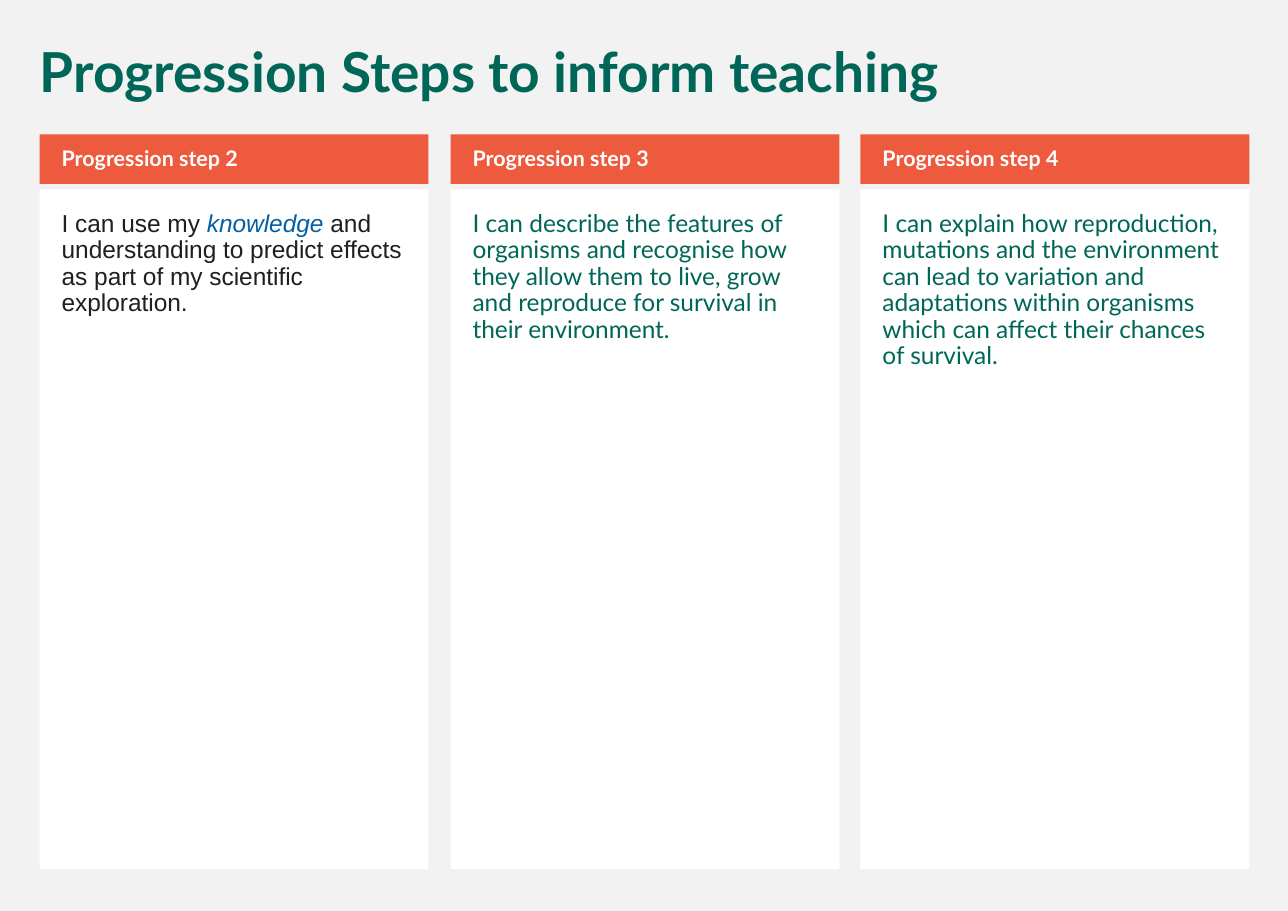
from pptx import Presentation
from pptx.dml.color import RGBColor
from pptx.enum import shapes, text
from pptx.util import Inches, Pt

COLORS = {
    "background": "F2F2F2",
    "card": "FFFFFF",
    "header": "ED5A3E",
    "header_text": "FFFFFF",
    "green": "006758",
    "dark": "1F1F1F",
    "blue": "0360A6",
}
COLUMN_LEFTS = (0.36, 4.09, 7.81)
COLUMN_WIDTH = 3.53
STEPS = [
    ("Progression step 2", [
        ("I can use my ", {"font": "Arial", "color": "dark"}),
        ("knowledge", {"font": "Arial", "color": "blue", "italic": True}),
        (" and understanding to predict effects as part of my scientific "
         "exploration.", {"font": "Arial", "color": "dark"}),
    ]),
    ("Progression step 3", [
        ("I can describe the features of organisms and recognise how they "
         "allow them to live, grow and reproduce for survival in their "
         "environment.", {}),
    ]),
    ("Progression step 4", [
        ("I can explain how reproduction, mutations and the environment can "
         "lead to variation and adaptations within organisms which can affect "
         "their chances of survival.", {}),
    ]),
]


def rgb(name):
    return RGBColor.from_string(COLORS[name])


def add_span(para, words, size=16, font="Lato", color="green", bold=False,
             italic=False):
    span = para.add_run()
    span.text = words
    span.font.size = Pt(size)
    span.font.name = font
    span.font.color.rgb = rgb(color)
    span.font.bold = bold
    span.font.italic = italic


def set_up_text(box, margins, anchor=text.MSO_ANCHOR.TOP):
    """Format the text frame and return its left-aligned first paragraph."""
    frame = box.text_frame
    frame.word_wrap = True
    frame.auto_size = text.MSO_AUTO_SIZE.NONE
    frame.vertical_anchor = anchor
    (frame.margin_left, frame.margin_top,
     frame.margin_right, frame.margin_bottom) = map(Inches, margins)
    para = frame.paragraphs[0]
    para.alignment = text.PP_ALIGN.LEFT
    para.line_spacing = 0.9
    para.space_before = Pt(11)
    return para


def add_panel(page, left, top, height, fill):
    box = page.shapes.add_shape(
        shapes.MSO_SHAPE.RECTANGLE, Inches(left), Inches(top),
        Inches(COLUMN_WIDTH), Inches(height))
    box.shadow.inherit = False
    box.fill.solid()
    box.fill.fore_color.rgb = rgb(fill)
    box.line.fill.background()
    return box


def add_step(page, left, heading, spans):
    card = add_panel(page, left, 1.72, 6.17, "card")
    para = set_up_text(card, (0.2, 0.2, 0.2, 0.2))
    for words, style in spans:
        add_span(para, words, **style)

    header = add_panel(page, left, 1.22, 0.45, "header")
    para = set_up_text(header, (0.2, 0.05, 0.1, 0.05), text.MSO_ANCHOR.MIDDLE)
    add_span(para, heading, size=14, color="header_text", bold=True)


def set_title(page, words):
    title = page.shapes.title
    title.left, title.top = Inches(0.26), Inches(0.36)
    title.width, title.height = Inches(11.08), Inches(0.65)
    para = set_up_text(title, (0.1, 0.05, 0.1, 0.05))
    add_span(para, words, size=36, bold=True)


def main():
    deck = Presentation()
    deck.slide_width, deck.slide_height = Inches(11.69), Inches(8.27)
    page = deck.slides.add_slide(deck.slide_layouts.get_by_name("Title Only"))
    page.background.fill.solid()
    page.background.fill.fore_color.rgb = rgb("background")

    set_title(page, "Progression Steps to inform teaching")
    for left, (heading, spans) in zip(COLUMN_LEFTS, STEPS):
        add_step(page, left, heading, spans)
    deck.save("out.pptx")


if __name__ == "__main__":
    main()
